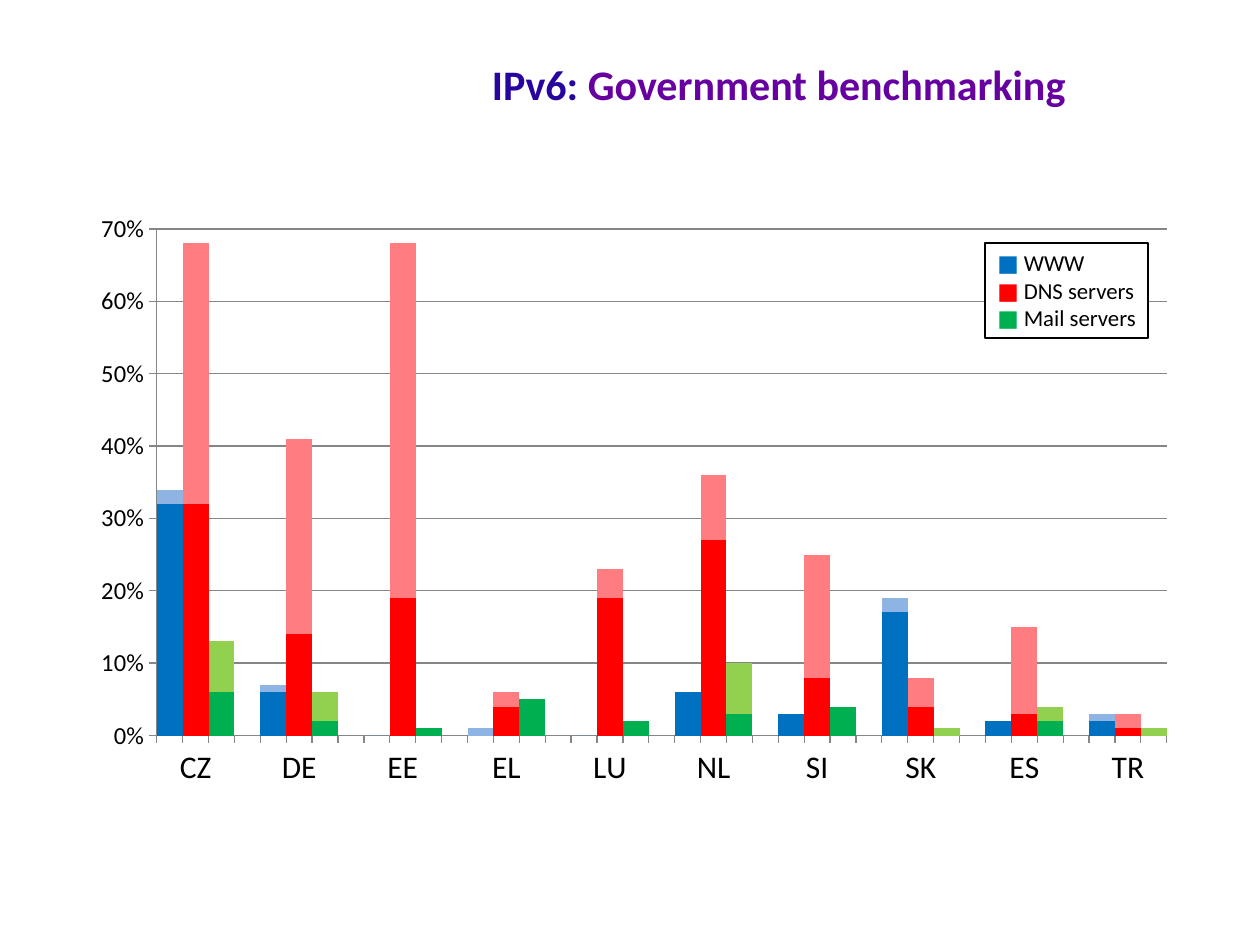
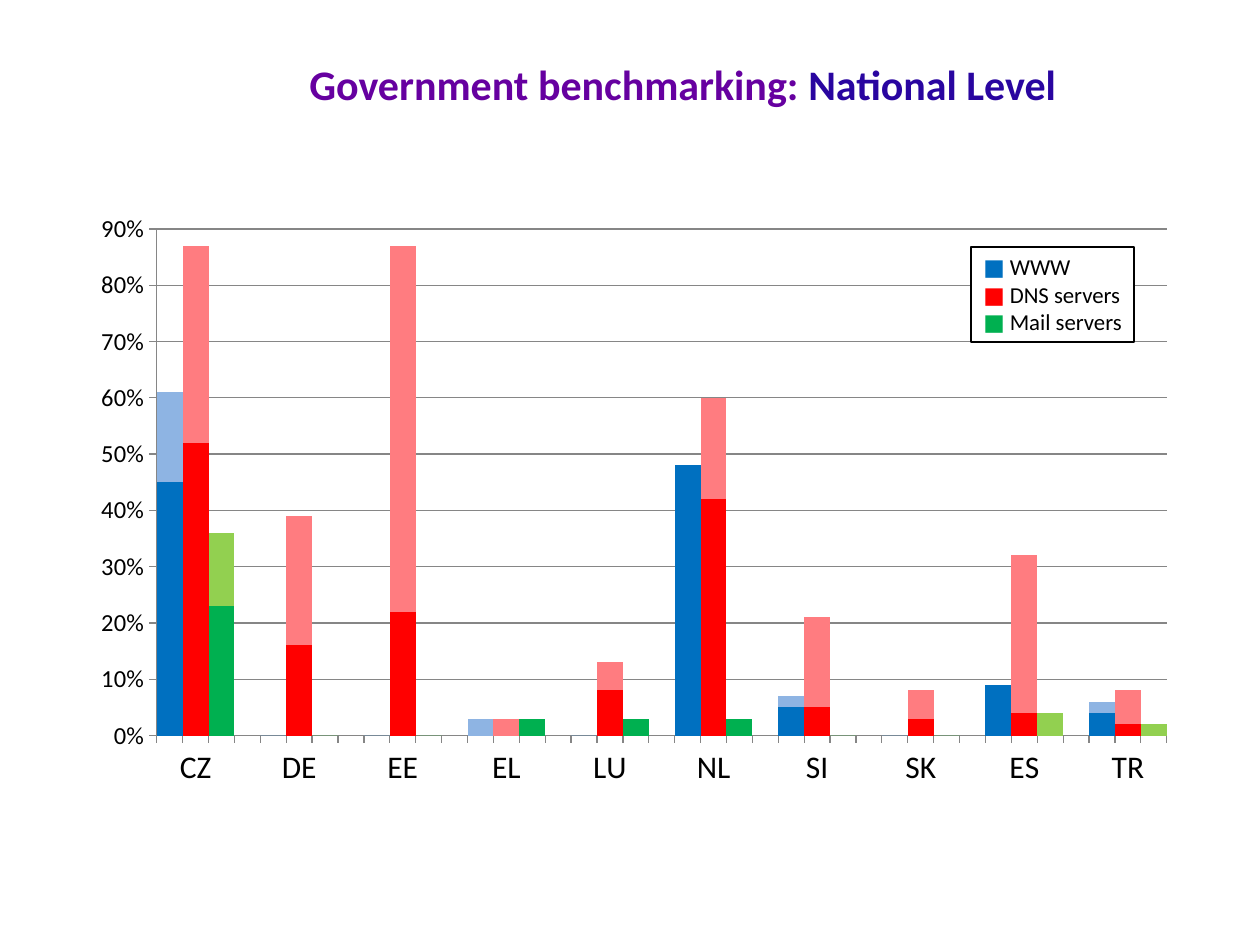
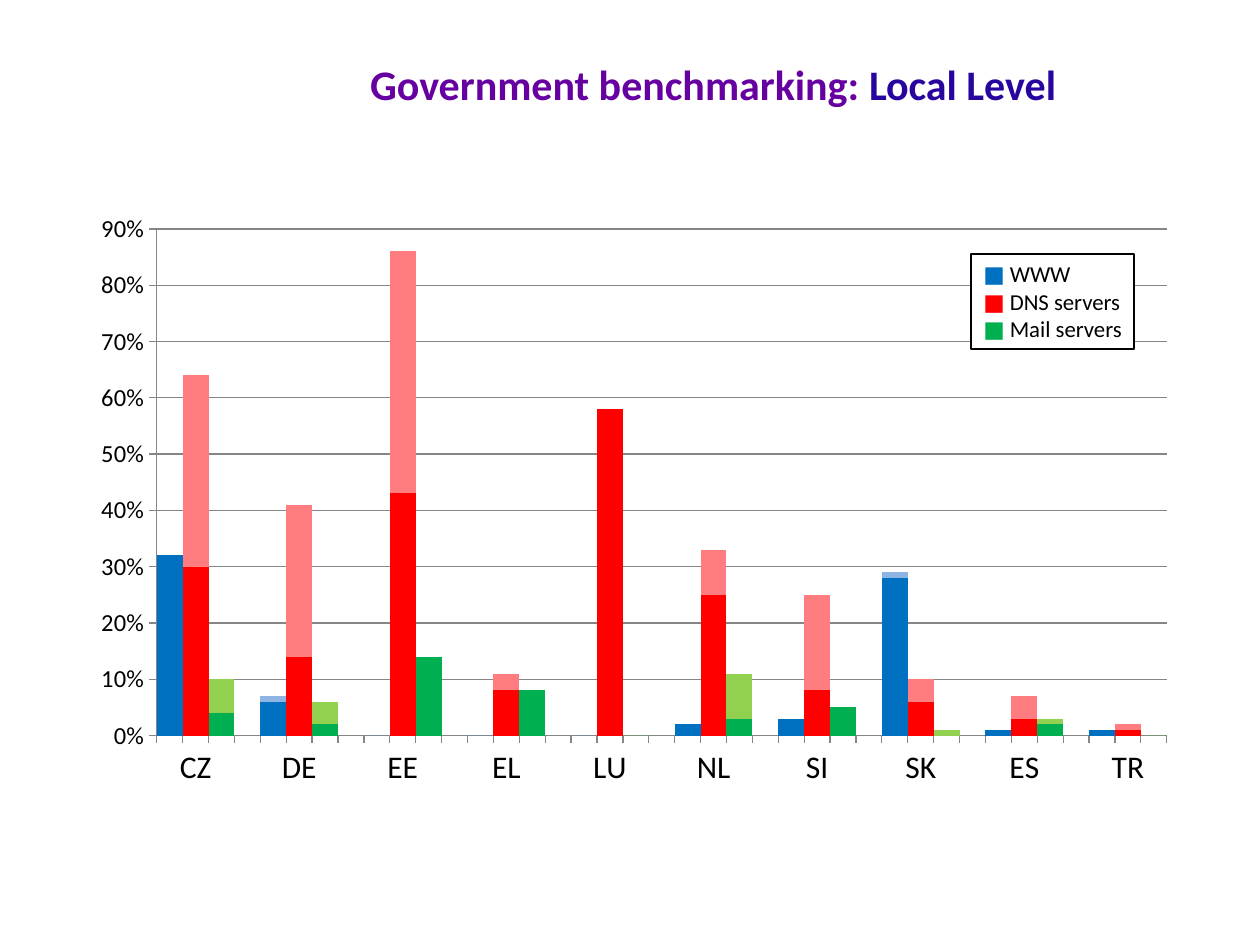
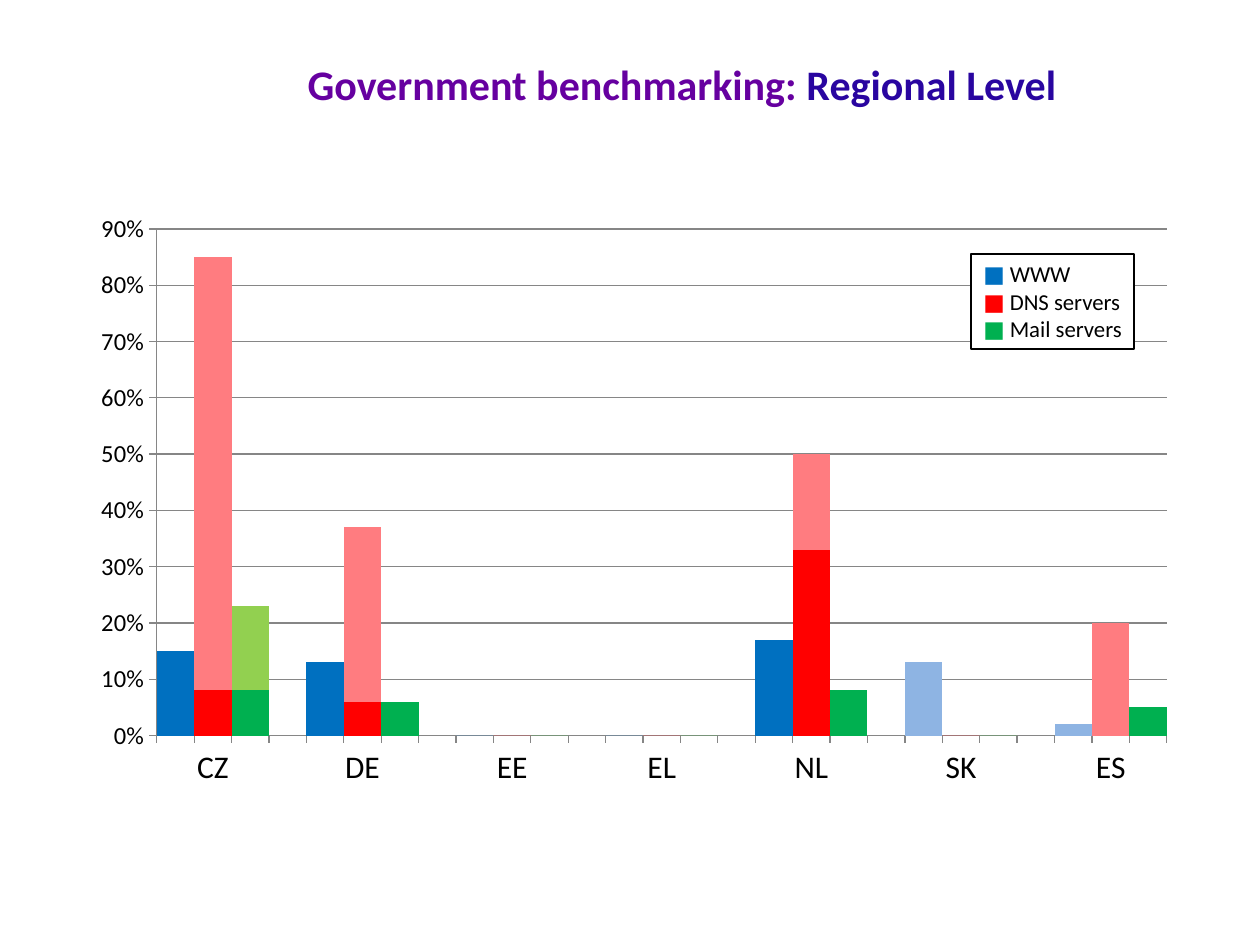
from dataclasses import dataclass

from pptx import Presentation
from pptx.chart.data import CategoryChartData
from pptx.dml.color import RGBColor
from pptx.enum.chart import XL_CHART_TYPE, XL_TICK_MARK
from pptx.enum.shapes import MSO_SHAPE
from pptx.enum.text import MSO_ANCHOR, MSO_AUTO_SIZE, PP_ALIGN
from pptx.util import Pt


@dataclass(frozen=True)
class Theme:
    font: str = "Calibri"
    black: str = "000000"
    white: str = "FFFFFF"
    grid: str = "868686"
    purple: str = "6600A0"
    indigo: str = "2905A0"
    title_size: int = 24
    country_size: int = 18
    percent_size: int = 14
    legend_size: int = 13


THEME = Theme()

# Service, colour of its lower segment, colour of its upper segment
SERVICES = [
    ("WWW", "0070C0", "8EB4E3"),
    ("DNS servers", "FF0000", "FF7C80"),
    ("Mail servers", "00B050", "92D050"),
]

# Per country, in percent: lower and upper segment of WWW, DNS, mail
SLIDES = [
    {
        "title": [("IPv6: ", THEME.indigo), ("Government benchmarking", THEME.purple)],
        "top_percent": 70,
        "legend_at": (985, 243),
        "countries": {
            "CZ": (32, 2, 32, 36, 6, 7),
            "DE": (6, 1, 14, 27, 2, 4),
            "EE": (0, 0, 19, 49, 1, 0),
            "EL": (0, 1, 4, 2, 5, 0),
            "LU": (0, 0, 19, 4, 2, 0),
            "NL": (6, 0, 27, 9, 3, 7),
            "SI": (3, 0, 8, 17, 4, 0),
            "SK": (17, 2, 4, 4, 0, 1),
            "ES": (2, 0, 3, 12, 2, 2),
            "TR": (2, 1, 1, 2, 0, 1),
        },
    },
    {
        "title": [("Government benchmarking: ", THEME.purple), ("National Level ", THEME.indigo)],
        "top_percent": 90,
        "legend_at": (971, 247),
        "countries": {
            "CZ": (45, 16, 52, 35, 23, 13),
            "DE": (0, 0, 16, 23, 0, 0),
            "EE": (0, 0, 22, 65, 0, 0),
            "EL": (0, 3, 0, 3, 3, 0),
            "LU": (0, 0, 8, 5, 3, 0),
            "NL": (48, 0, 42, 18, 3, 0),
            "SI": (5, 2, 5, 16, 0, 0),
            "SK": (0, 0, 3, 5, 0, 0),
            "ES": (9, 0, 4, 28, 0, 4),
            "TR": (4, 2, 2, 6, 0, 2),
        },
    },
    {
        "title": [("Government benchmarking: ", THEME.purple), ("Local Level ", THEME.indigo)],
        "top_percent": 90,
        "legend_at": (971, 254),
        "countries": {
            "CZ": (32, 0, 30, 34, 4, 6),
            "DE": (6, 1, 14, 27, 2, 4),
            "EE": (0, 0, 43, 43, 14, 0),
            "EL": (0, 0, 8, 3, 8, 0),
            "LU": (0, 0, 58, 0, 0, 0),
            "NL": (2, 0, 25, 8, 3, 8),
            "SI": (3, 0, 8, 17, 5, 0),
            "SK": (28, 1, 6, 4, 0, 1),
            "ES": (1, 0, 3, 4, 2, 1),
            "TR": (1, 0, 1, 1, 0, 0),
        },
    },
    {
        "title": [("Government benchmarking: ", THEME.purple), ("Regional Level ", THEME.indigo)],
        "top_percent": 90,
        "legend_at": (971, 254),
        "countries": {
            "CZ": (15, 0, 8, 77, 8, 15),
            "DE": (13, 0, 6, 31, 6, 0),
            "EE": (0, 0, 0, 0, 0, 0),
            "EL": (0, 0, 0, 0, 0, 0),
            "NL": (17, 0, 33, 17, 8, 0),
            "SK": (0, 13, 0, 0, 0, 0),
            "ES": (0, 2, 0, 20, 5, 0),
        },
    },
]

SLIDE_SIZE = (1260, 945)
TITLE_BOX = (54, 52, 1024, 73)
CHART_BOX = (79, 202, 1110, 596)
LEGEND_SIZE = (163, 95)
LEGEND_RIGHT_MARGIN = 3
PX_PER_INCH = 126


def px(*lengths):
    return [round(length * 914400 / PX_PER_INCH) for length in lengths]


def rgb(code):
    return RGBColor.from_string(code)


def style_font(font, size, color, bold=False):
    font.name, font.size, font.bold = THEME.font, Pt(size), bold
    font.color.rgb = rgb(color)


def style_line(line, color=THEME.grid):
    line.color.rgb = rgb(color)
    line.width = Pt(0.75)


def write(frame, paragraphs, size, bold=False, align=PP_ALIGN.LEFT, after=0):
    """Fill a frame with paragraphs, each a list of (text, colour) runs."""
    frame.word_wrap = True
    frame.vertical_anchor = MSO_ANCHOR.TOP
    for index, runs in enumerate(paragraphs):
        paragraph = frame.add_paragraph() if index else frame.paragraphs[0]
        paragraph.alignment = align
        paragraph.space_after = Pt(after)
        for text, color in runs:
            run = paragraph.add_run()
            run.text = text
            style_font(run.font, size, color, bold)


def clustered_stacks(countries):
    """Give each country one slot per service, with an empty slot between countries."""
    step = len(SERVICES) + 1
    slots = step * len(countries) - 1
    labels = [""] * slots
    labels[1::step] = countries
    data = CategoryChartData(number_format="0%")
    data.categories = labels
    for index in range(2 * len(SERVICES)):
        values = [None] * slots
        values[index // 2::step] = [row[index] / 100 for row in countries.values()]
        data.add_series(f"Series {index + 1}", values)
    return data


def style_axis(axis, size):
    axis.major_tick_mark = XL_TICK_MARK.OUTSIDE
    axis.minor_tick_mark = XL_TICK_MARK.NONE
    style_font(axis.tick_labels.font, size, THEME.black)
    style_line(axis.format.line)


def add_benchmark_chart(slide, countries, top_percent):
    chart = slide.shapes.add_chart(
        XL_CHART_TYPE.COLUMN_STACKED, *px(*CHART_BOX), clustered_stacks(countries)
    ).chart
    chart.has_legend = chart.has_title = False
    style_font(chart.font, THEME.country_size, THEME.black)

    plot = chart.plots[0]
    plot.gap_width, plot.overlap, plot.vary_by_categories = 0, 100, False
    shades = [shade for _, *pair in SERVICES for shade in pair]
    for series, shade in zip(plot.series, shades):
        series.invert_if_negative = False
        series.format.fill.solid()
        series.format.fill.fore_color.rgb = rgb(shade)

    style_axis(chart.category_axis, THEME.country_size)
    percent = chart.value_axis
    style_axis(percent, THEME.percent_size)
    percent.minimum_scale, percent.maximum_scale = 0, top_percent / 100
    percent.major_unit = 0.1
    percent.tick_labels.number_format = "0%"
    percent.tick_labels.number_format_is_linked = False
    percent.has_major_gridlines = True
    style_line(percent.major_gridlines.format.line)


def add_service_legend(slide, corner):
    legend = slide.shapes.add_shape(MSO_SHAPE.RECTANGLE, *px(*corner, *LEGEND_SIZE))
    legend.shadow.inherit = False
    legend.fill.solid()
    legend.fill.fore_color.rgb = rgb(THEME.white)
    style_line(legend.line, THEME.black)
    entries = [[("■ ", color), (service, THEME.black)] for service, color, _ in SERVICES]
    write(legend.text_frame, entries, THEME.legend_size)
    legend.text_frame.margin_right, = px(LEGEND_RIGHT_MARGIN)
    legend.text_frame.auto_size = MSO_AUTO_SIZE.SHAPE_TO_FIT_TEXT


def main():
    deck = Presentation()
    deck.slide_width, deck.slide_height = px(*SLIDE_SIZE)
    for content in SLIDES:
        slide = deck.slides.add_slide(deck.slide_layouts[6])
        title = slide.shapes.add_textbox(*px(*TITLE_BOX))
        write(title.text_frame, [content["title"]], THEME.title_size,
              bold=True, align=PP_ALIGN.RIGHT, after=5.4)
        add_benchmark_chart(slide, content["countries"], content["top_percent"])
        add_service_legend(slide, content["legend_at"])
    deck.save("out.pptx")


if __name__ == "__main__":
    main()
